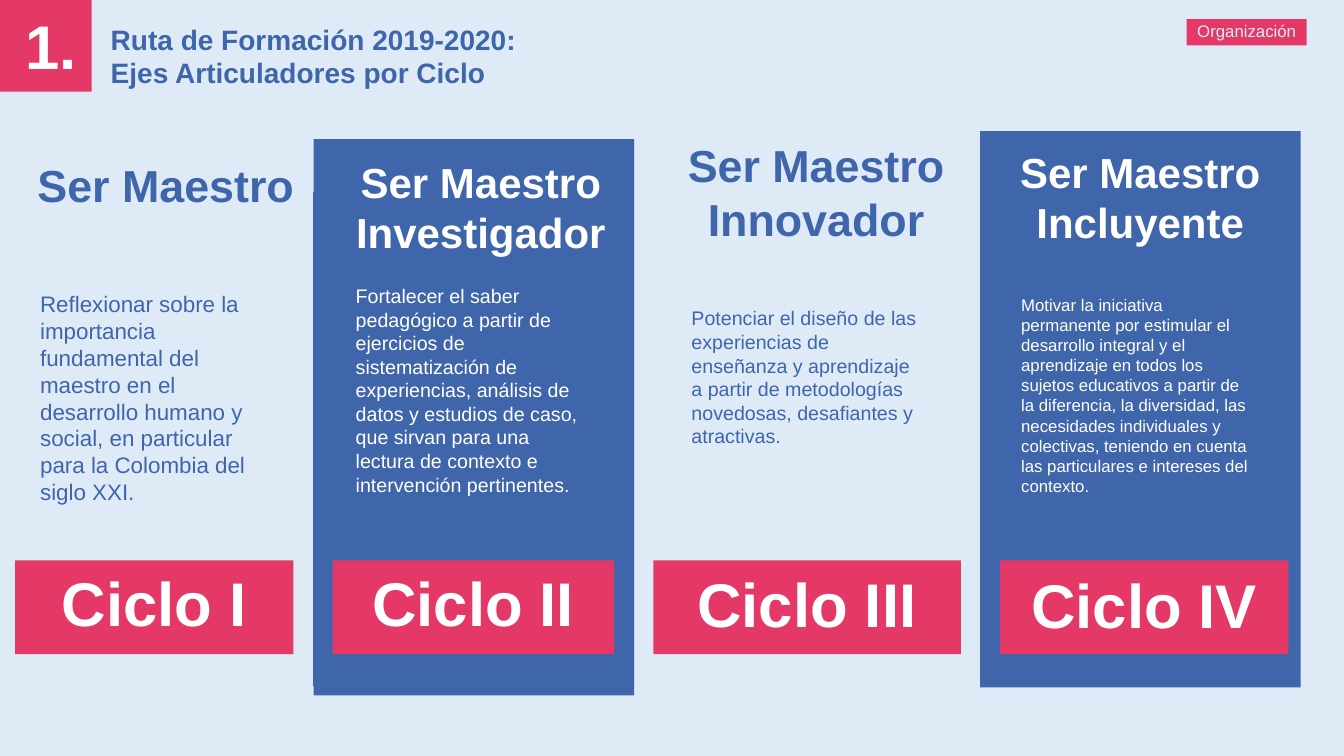
import dataclasses
import pptx
import pptx.dml.color
import pptx.enum.shapes
import pptx.enum.text
import pptx.oxml.ns
import pptx.util
from lxml import etree

Inches = pptx.util.Inches
ALIGN = pptx.enum.text.PP_ALIGN


@dataclasses.dataclass(frozen=True)
class Theme:
    font: str = "Arial"
    background: str = "DEEBF7"
    pink: str = "E43866"
    blue: str = "3F65AA"
    white: str = "FFFFFF"
    pale: str = "E3ECF8"
    display: int = 44
    title: int = 20
    tag: int = 12
    rule: float = 0.75


@dataclasses.dataclass(frozen=True)
class Cycle:
    box: tuple
    panel: bool
    label: str
    bar: tuple
    label_shift: float
    heading: str
    heading_box: tuple
    heading_size: int
    body: str
    body_at: tuple
    body_size: int


THEME = Theme()

CYCLES = [
    Cycle((0.15, 1.3, 2.76, 5.52), False, "Ciclo I", (0, 4.26, 2.76), 0,
          "Ser Maestro", (-0.35, 0.22, 3.69, 0.64), 32,
          "Reflexionar sobre la importancia fundamental del maestro en el "
          "desarrollo humano y social, en particular para la Colombia del siglo XXI.",
          (0.15, 1.53, 2.26), 16),
    Cycle((3.11, 1.38, 3.18, 5.52), True, "Ciclo II", (0.19, 4.18, 2.79), 0,
          "Ser Maestro Investigador", (0.29, 0.12, 2.74, 1.11), 30,
          "Fortalecer el saber pedagógico a partir de ejercicios de sistematización "
          "de experiencias, análisis de datos y estudios de caso, que sirvan para "
          "una lectura de contexto e intervención pertinentes.",
          (0.32, 1.39, 2.22), 14),
    Cycle((6.48, 1.3, 3.05, 5.52), False, "Ciclo III", (0, 4.26, 3.05), 0.01,
          "Ser Maestro Innovador", (0.04, 0.02, 3.15, 1.18), 32,
          "Potenciar el diseño de las experiencias de enseñanza y aprendizaje a "
          "partir de metodologías novedosas, desafiantes y atractivas.",
          (0.28, 1.69, 1.51), 14),
    Cycle((9.72, 1.3, 3.18, 5.52), True, "Ciclo IV", (0.2, 4.26, 2.86), 0.02,
          "Ser Maestro Incluyente", (0.22, 0.1, 2.74, 1.11), 30,
          "Motivar la iniciativa permanente por estimular el desarrollo integral y "
          "el aprendizaje en todos los sujetos educativos a partir de la diferencia, "
          "la diversidad, las necesidades individuales y colectivas, teniendo en "
          "cuenta las particulares e intereses del contexto.",
          (0.31, 1.57, 2.12), 12),
]


def rgb(color):
    return pptx.dml.color.RGBColor.from_string(color)


def add_rect(s, box, color):
    sp = s.shapes.add_shape(pptx.enum.shapes.MSO_SHAPE.RECTANGLE, *map(Inches, box))
    sp.shadow.inherit = False
    sp.fill.solid()
    sp.fill.fore_color.rgb = rgb(color)
    sp.line.fill.background()


def add_text(s, box, lines, size, color, bold=False, align=ALIGN.LEFT):
    tf = s.shapes.add_textbox(*map(Inches, box)).text_frame
    tf.word_wrap = True
    tf.auto_size = pptx.enum.text.MSO_AUTO_SIZE.SHAPE_TO_FIT_TEXT
    for i, line in enumerate(lines):
        p = tf.add_paragraph() if i else tf.paragraphs[0]
        p.alignment = align
        r = p.add_run()
        r.text = line
        r.font.name = THEME.font
        r.font.size = pptx.util.Pt(size)
        r.font.bold = bold
        r.font.color.rgb = rgb(color)


def add_rule(s, x, top, bottom):
    cx = s.shapes.add_connector(pptx.enum.shapes.MSO_CONNECTOR.STRAIGHT,
                                *map(Inches, (x, top, x, bottom)))
    cx.line.color.rgb = rgb(THEME.blue)
    cx.line.width = pptx.util.Pt(THEME.rule)
    etree.SubElement(cx._element.spPr, pptx.oxml.ns.qn("a:effectLst"))


def add_header(s, box):
    x, y, w, h = box
    add_rect(s, (x, y, h, h), THEME.pink)
    add_text(s, (x + 0.15, y + 0.03, 0.76, 0.84), ["1."],
             THEME.display, THEME.white, bold=True)
    add_text(s, (x + 1, y + 0.17, 6.07, 0.77),
             ["Ruta de Formación 2019-2020:", "Ejes Articuladores por Ciclo"],
             THEME.title, THEME.blue, bold=True)
    right = x + w
    add_rect(s, (right - 1.56, y + 0.19, 1.19, 0.26), THEME.pink)
    add_text(s, (right - 1.61, y + 0.16, 1.29, 0.3), ["Organización"],
             THEME.tag, THEME.pale, align=ALIGN.CENTER)


def add_cycle(s, cycle):
    x, y, w, h = cycle.box
    color = THEME.white if cycle.panel else THEME.blue
    if cycle.panel:
        add_rect(s, cycle.box, THEME.blue)

    dx, dy, tw, th = cycle.heading_box
    add_text(s, (x + dx, y + dy, tw, th), [cycle.heading],
             cycle.heading_size, color, bold=True, align=ALIGN.CENTER)

    dx, dy, th = cycle.body_at
    add_text(s, (x + dx, y + dy, 2.5, th), [cycle.body], cycle.body_size, color)

    dx, dy, bw = cycle.bar
    add_rect(s, (x + dx, y + dy, bw, 0.93), THEME.pink)
    add_text(s, (x + dx, y + dy + cycle.label_shift, bw, 0.84), [cycle.label],
             THEME.display, THEME.white, bold=True, align=ALIGN.CENTER)


def main():
    prs = pptx.Presentation()
    prs.slide_width = Inches(13.33)
    prs.slide_height = Inches(7.5)
    s = prs.slides.add_slide(prs.slide_layouts[6])
    s.background.fill.solid()
    s.background.fill.fore_color.rgb = rgb(THEME.background)

    add_header(s, (0, 0, 13.33, 0.91))
    for cycle in CYCLES:
        add_cycle(s, cycle)
    add_rule(s, 3.11, 1.9, 6.81)
    add_rule(s, 6.28, 1.93, 6.83)
    prs.save("out.pptx")


if __name__ == "__main__":
    main()
